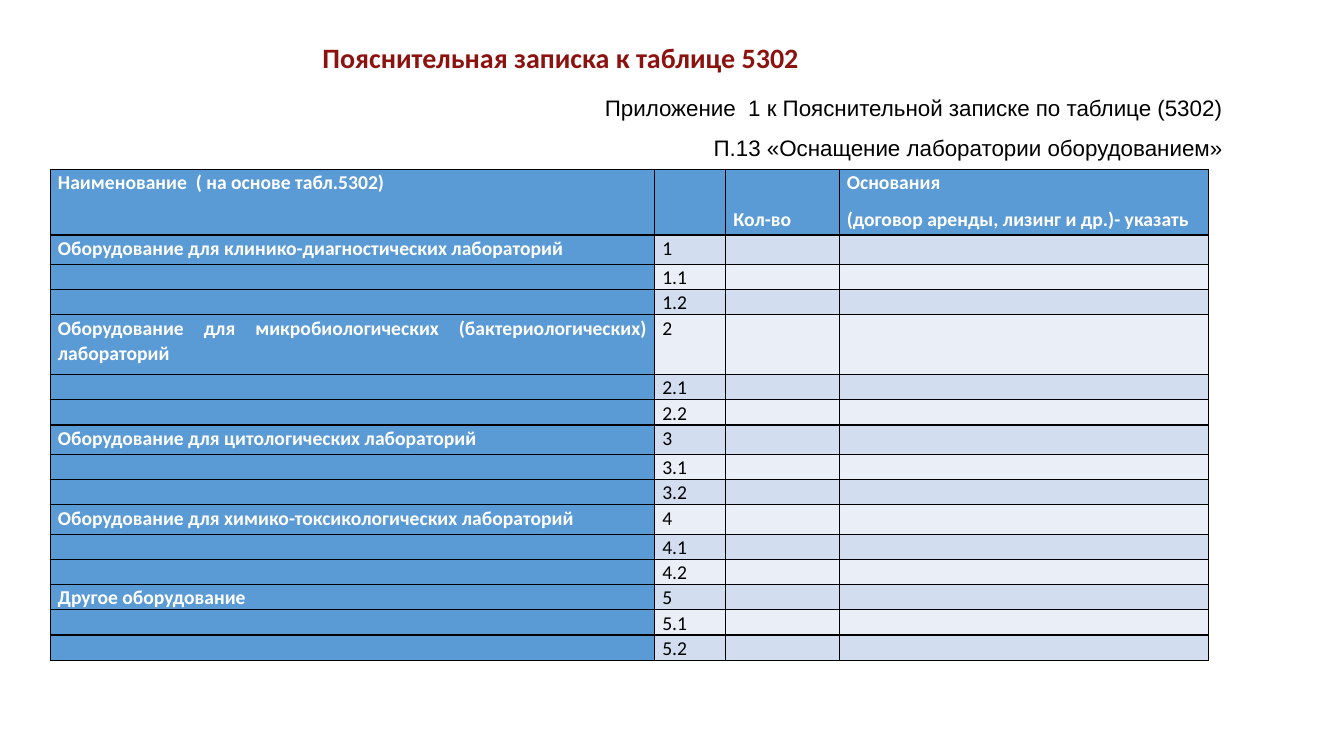
from lxml.etree import SubElement
from pptx import Presentation
from pptx.dml.color import RGBColor
from pptx.enum.text import MSO_ANCHOR as Anchor, PP_ALIGN as Align
from pptx.oxml.ns import qn
from pptx.util import Cm, Pt

TITLE = "Пояснительная записка к таблице 5302"
APPENDIX = [
    "Приложение  1 к Пояснительной записке по таблице (5302)",
    "П.13 «Оснащение лаборатории оборудованием»",
]
HEADER = [
    ["Наименование  ( на основе табл.5302)"],
    [],
    ["Кол-во"],
    ["Основания", "(договор аренды, лизинг и др.)- указать"],
]
EQUIPMENT = [
    ("Оборудование для клинико-диагностических лабораторий", 0.74),
    ("Оборудование для микробиологических (бактериологических) лабораторий", 1.51),
    ("Оборудование для цитологических лабораторий", 0.74),
    ("Оборудование для химико-токсикологических лабораторий", 0.74),
    ("Другое оборудование", 0.63),
]
ITEMS_PER_GROUP = 2
COLUMN_WIDTHS = [15.23, 1.79, 2.86, 9.31]
HEADER_HEIGHT, ITEM_HEIGHT = 1.65, 0.63

WHITE = RGBColor(0xFF, 0xFF, 0xFF)
BLACK = RGBColor(0x00, 0x00, 0x00)
DARK_RED = RGBColor(0x8C, 0x12, 0x10)
BLUE = RGBColor(0x5B, 0x9B, 0xD5)
BANDS = [RGBColor(0xD2, 0xDE, 0xEF), RGBColor(0xEA, 0xEF, 0xF7)]


def write(frame, lines, font, size, color, bold, align, spacing):
    """Fill a text frame with one formatted paragraph per line."""
    for index, line in enumerate(lines):
        paragraph = frame.add_paragraph() if index else frame.paragraphs[0]
        paragraph.alignment = align
        paragraph.line_spacing = spacing
        if index < len(lines) - 1:
            paragraph.space_after = Pt(8)
        run = paragraph.add_run()
        run.text = line
        run.font.name = font
        run.font.size = Pt(size)
        run.font.bold = bold
        run.font.color.rgb = color


def add_borders(cell):
    """Draw a thin black line on each side of a cell."""
    properties = cell._tc.get_or_add_tcPr()
    for side in ("a:lnL", "a:lnR", "a:lnT", "a:lnB"):
        line = SubElement(properties, qn(side), w=str(Pt(1)))
        fill = SubElement(line, qn("a:solidFill"))
        SubElement(fill, qn("a:srgbClr"), val=str(BLACK))


def fill_cell(cell, lines, color, emphasized):
    """Format one table cell and write its lines."""
    cell.margin_left = cell.margin_right = Cm(0.19)
    cell.margin_top = cell.margin_bottom = 0
    add_borders(cell)
    cell.fill.solid()
    cell.fill.fore_color.rgb = color
    if lines:
        text_color = WHITE if emphasized else BLACK
        write(cell.text_frame, lines, "Calibri", 14, text_color, emphasized, Align.JUSTIFY, 1.07)
    else:
        SubElement(cell.text_frame.paragraphs[0]._p, qn("a:endParaRPr"), sz="1400")


def build_rows():
    """Return the cell lines and the height of every table row."""
    rows = [(HEADER, HEADER_HEIGHT)]
    for number, (name, height) in enumerate(EQUIPMENT, 1):
        rows.append(([[name], [str(number)], [], []], height))
        for item in range(1, ITEMS_PER_GROUP + 1):
            rows.append(([[], [f"{number}.{item}"], [], []], ITEM_HEIGHT))
    return rows


def add_equipment_table(slide):
    """Add the equipment table with its banded rows."""
    rows = build_rows()
    total_height = sum(height for _, height in rows)
    table = slide.shapes.add_table(
        len(rows), len(COLUMN_WIDTHS), Cm(1.27), Cm(4.27), Cm(sum(COLUMN_WIDTHS)), Cm(total_height)
    ).table
    table.first_col = True
    for column, width in zip(table.columns, COLUMN_WIDTHS):
        column.width = Cm(width)
    for row_index, (cells, height) in enumerate(rows):
        table.rows[row_index].height = Cm(height)
        for column_index, lines in enumerate(cells):
            emphasized = row_index == 0 or column_index == 0
            color = BLUE if emphasized else BANDS[(row_index - 1) % 2]
            fill_cell(table.cell(row_index, column_index), lines, color, emphasized)
    quantity = table.cell(0, 2)
    quantity.vertical_anchor = Anchor.BOTTOM
    quantity.margin_bottom = Cm(0.08)


def main():
    """Build and save the slide."""
    presentation = Presentation()
    presentation.slide_width, presentation.slide_height = Cm(33.87), Cm(19.05)
    slide = presentation.slides.add_slide(presentation.slide_layouts[5])

    title = slide.shapes.title
    title.left, title.top, title.width, title.height = Cm(7.87), Cm(0.76), Cm(20.07), Cm(1.47)
    title.text_frame.vertical_anchor = Anchor.MIDDLE
    write(title.text_frame, [TITLE], "Calibri", 20, DARK_RED, True, Align.LEFT, 0.9)

    appendix = slide.shapes.add_textbox(Cm(12.98), Cm(2.21), Cm(18.08), Cm(2.01))
    appendix.text_frame.word_wrap = True
    write(appendix.text_frame, APPENDIX, "Arial", 16, BLACK, False, Align.RIGHT, 1.07)

    add_equipment_table(slide)
    presentation.save("out.pptx")


if __name__ == "__main__":
    main()
